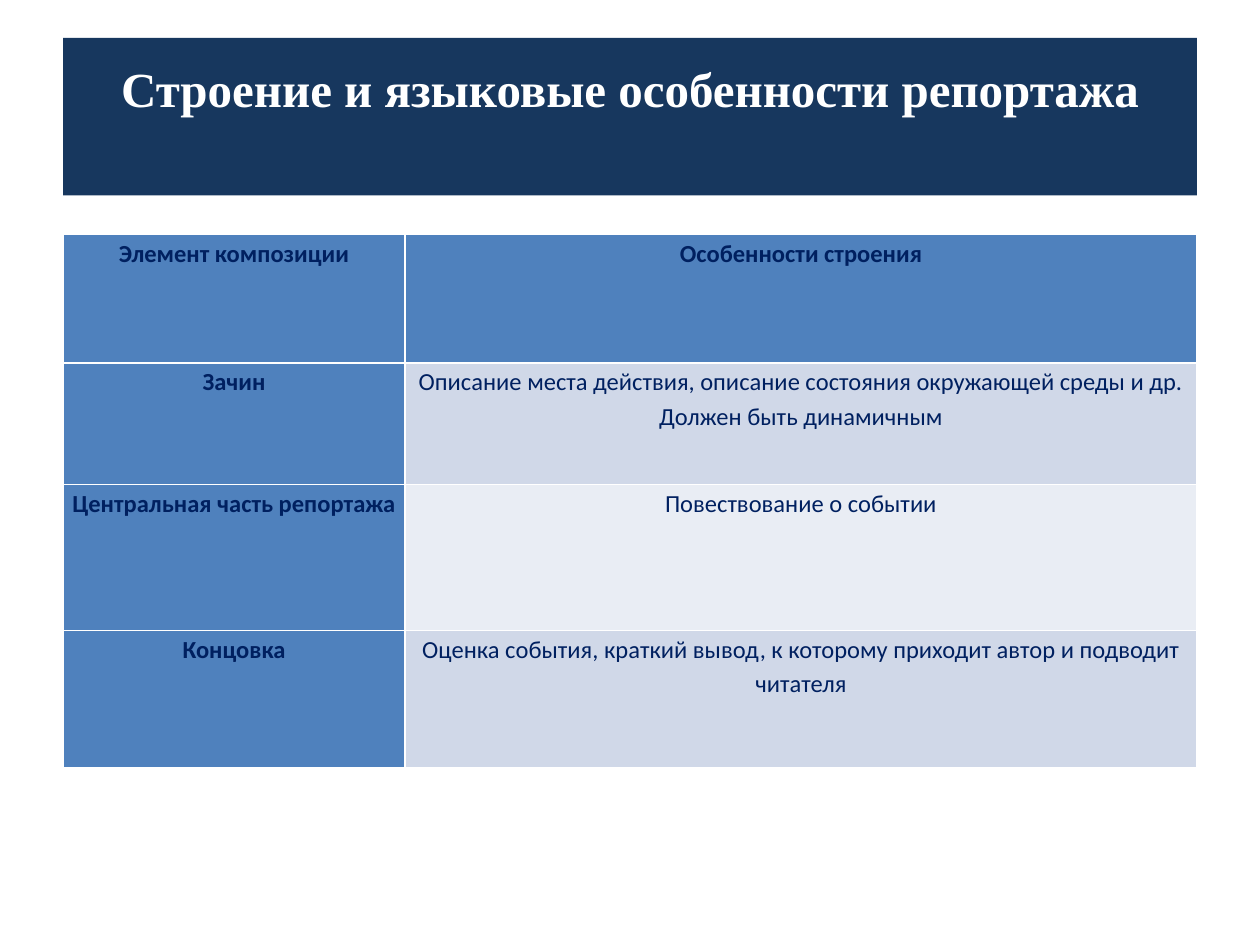
from pptx import Presentation
from pptx.dml.color import RGBColor
from pptx.enum.text import MSO_ANCHOR, MSO_AUTO_SIZE, PP_ALIGN
from pptx.util import Pt


def rgb(value):
    return RGBColor.from_string(value)


def format_text(p, font, size, color, bold):
    p.alignment = PP_ALIGN.CENTER
    for r in p.runs:
        r.font.name = font
        r.font.size = Pt(size)
        r.font.bold = bold
        r.font.color.rgb = rgb(color)


prs = Presentation()
prs.slide_width, prs.slide_height = Pt(720), Pt(540)
s = prs.slides.add_slide(prs.slide_layouts[5])

# Title banner, with the text raised by the bottom margin
title = s.shapes.title
title.left, title.top, title.width, title.height = Pt(36), Pt(21.6), Pt(648), Pt(90)
title.fill.solid()
title.fill.fore_color.rgb = rgb("17375E")
tf = title.text_frame
tf.text = "Строение и языковые особенности репортажа"
tf.word_wrap = True
tf.auto_size = MSO_AUTO_SIZE.NONE
tf.vertical_anchor = MSO_ANCHOR.MIDDLE
tf.margin_bottom = Pt(36)
format_text(tf.paragraphs[0], "Times New Roman", 28, "FFFFFF", True)

# Composition table; the default table style draws the white borders
rows = [
    ("Элемент композиции", "Особенности строения"),
    ("Зачин", "Описание места действия, описание состояния окружающей среды и др. "
              "Должен быть динамичным"),
    ("Центральная часть репортажа", "Повествование о событии"),
    ("Концовка", "Оценка события, краткий вывод, к которому приходит автор "
                 "и подводит читателя"),
]
col_widths = [195.5, 452.5]
row_heights = [73.5, 69.5, 83.5, 78.5]

table = s.shapes.add_table(len(rows), len(col_widths), Pt(36), Pt(134),
                           Pt(sum(col_widths)), Pt(sum(row_heights))).table
table.first_col = True
for column, width in zip(table.columns, col_widths):
    column.width = Pt(width)

for i, (texts, height) in enumerate(zip(rows, row_heights)):
    table.rows[i].height = Pt(height)
    for j, text in enumerate(texts):
        cell = table.cell(i, j)
        is_header = i == 0 or j == 0
        band = "D0D8E8" if i % 2 else "E9EDF4"
        cell.fill.solid()
        cell.fill.fore_color.rgb = rgb("4F81BD" if is_header else band)
        cell.margin_left = cell.margin_right = Pt(5)
        cell.margin_top = cell.margin_bottom = Pt(0)
        cell.text_frame.text = text
        p = cell.text_frame.paragraphs[0]
        p.line_spacing = 1.15
        p.space_after = Pt(10)
        format_text(p, "Calibri", 14, "002060", is_header)

prs.save("out.pptx")
